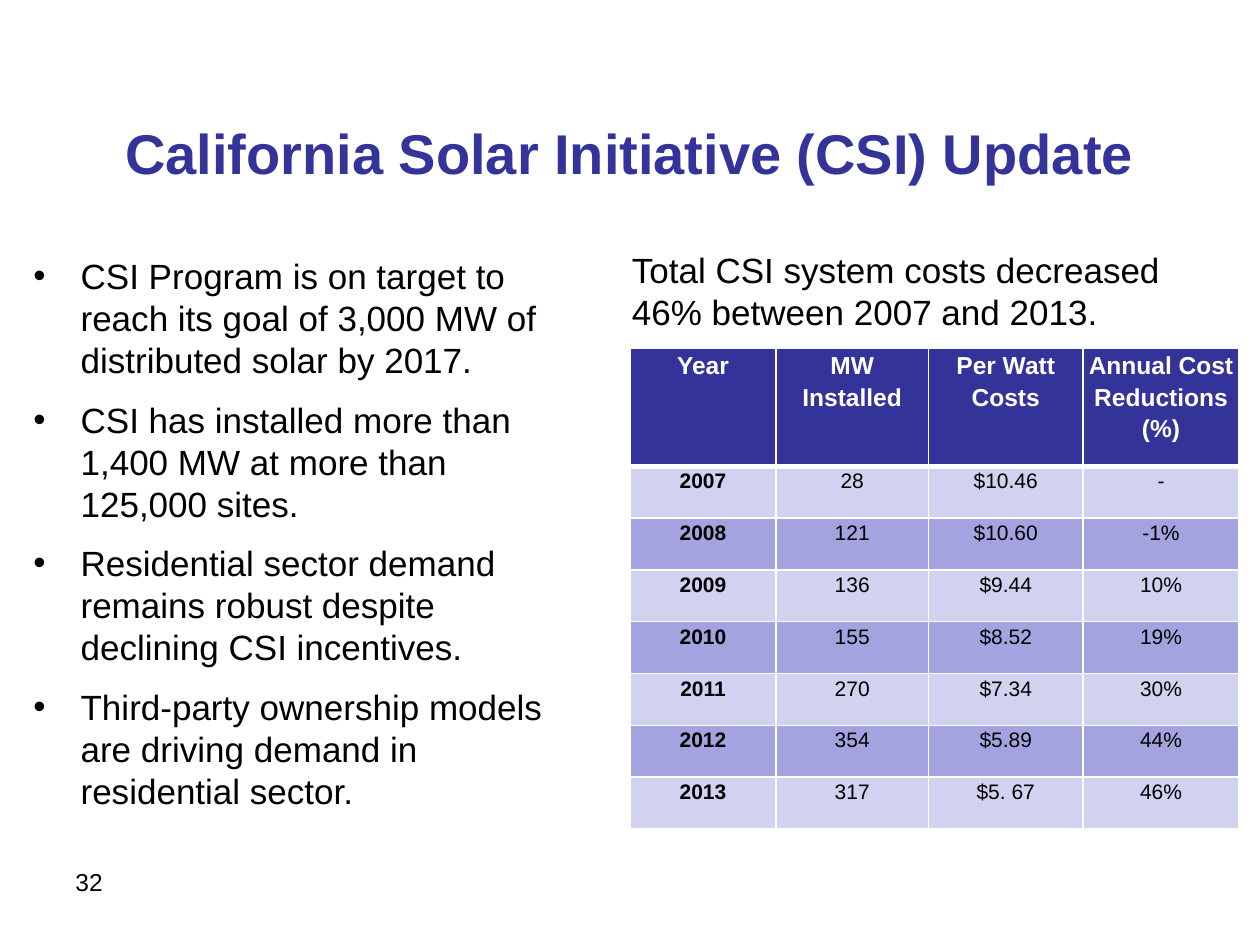
from typing import NamedTuple

from lxml import etree
from pptx import Presentation
from pptx.dml.color import RGBColor
from pptx.enum.text import MSO_ANCHOR, MSO_AUTO_SIZE, PP_ALIGN
from pptx.oxml.ns import qn
from pptx.util import Pt

LEFT, CENTER = PP_ALIGN.LEFT, PP_ALIGN.CENTER
TOP, MIDDLE = MSO_ANCHOR.TOP, MSO_ANCHOR.MIDDLE
FIT_SHAPE, NO_FIT = MSO_AUTO_SIZE.SHAPE_TO_FIT_TEXT, MSO_AUTO_SIZE.NONE

FONT = "Arial"
INDIGO, LAVENDER, PALE = "333399", "A3A3E0", "D1D1F0"
WHITE, BLACK = "FFFFFF", "000000"
BULLET_INDENT = 27


class Box(NamedTuple):
    left: float
    top: float
    width: float
    height: float


class YearResult(NamedTuple):
    year: str
    installed: str
    cost: str
    reduction: str


HEADINGS = YearResult("Year", "MW Installed", "Per Watt Costs", "Annual Cost Reductions (%)")
RESULTS = [
    YearResult("2007", "28", "$10.46", "-"),
    YearResult("2008", "121", "$10.60", "-1%"),
    YearResult("2009", "136", "$9.44", "10%"),
    YearResult("2010", "155", "$8.52", "19%"),
    YearResult("2011", "270", "$7.34", "30%"),
    YearResult("2012", "354", "$5.89", "44%"),
    YearResult("2013", "317", "$5. 67", "46%"),
]
HIGHLIGHTS = [
    "CSI Program is on target to reach its goal of 3,000 MW of distributed solar by 2017.",
    "CSI has installed more than 1,400 MW at more than 125,000 sites.",
    "Residential sector demand remains robust despite declining CSI incentives.",
    "Third-party ownership models are driving demand in residential sector.",
]
COLUMN_WIDTHS = [83.5, 87, 88.5, 89]
HEADING_HEIGHT, RESULT_HEIGHT = 67.5, 29.6
CELL_MARGIN = 2.5


def color(value: str) -> RGBColor:
    return RGBColor.from_string(value)


def add_bullet(paragraph) -> None:
    properties = paragraph._p.get_or_add_pPr()
    properties.set("marL", str(Pt(BULLET_INDENT)))
    properties.set("indent", str(-Pt(BULLET_INDENT)))
    etree.SubElement(properties, qn("a:buFont")).set("typeface", FONT)
    etree.SubElement(properties, qn("a:buChar")).set("char", "•")


def write(frame, *lines: str, size: float, ink: str = BLACK, bold: bool = False,
          align=LEFT, bullets: bool = False, spacing: float = 1,
          before: float = 0, after: float = 0) -> None:
    for index, line in enumerate(lines):
        paragraph = frame.add_paragraph() if index else frame.paragraphs[0]
        if bullets:
            add_bullet(paragraph)
        paragraph.alignment = align
        paragraph.line_spacing = spacing
        paragraph.space_before = Pt(before if index else 0)
        paragraph.space_after = Pt(after)
        run = paragraph.add_run()
        run.text = line
        run.font.name = FONT
        run.font.size = Pt(size)
        run.font.bold = bold
        run.font.color.rgb = color(ink)


def add_text(slide, box: Box, *lines: str, fit=NO_FIT, **text_format) -> None:
    frame = slide.shapes.add_textbox(*map(Pt, box)).text_frame
    frame.word_wrap = True
    frame.auto_size = fit
    write(frame, *lines, **text_format)


def set_borders(cell, top: float, bottom: float) -> None:
    properties = cell._tc.get_or_add_tcPr()
    for side, width in (("L", 1), ("R", 1), ("T", top), ("B", bottom)):
        line = etree.SubElement(properties, qn(f"a:ln{side}"), w=str(Pt(width)))
        solid = etree.SubElement(line, qn("a:solidFill"))
        etree.SubElement(solid, qn("a:srgbClr"), val=WHITE)


def fill_cell(cell, text: str, background: str, top: float = 1, bottom: float = 1,
              **text_format) -> None:
    set_borders(cell, top, bottom)
    cell.fill.solid()
    cell.fill.fore_color.rgb = color(background)
    cell.margin_left = cell.margin_right = Pt(CELL_MARGIN)
    cell.margin_top = cell.margin_bottom = Pt(0)
    cell.vertical_anchor = TOP
    write(cell.text_frame, text, align=CENTER, spacing=1.15, after=10, **text_format)


def add_results(slide, left: float, top: float) -> None:
    height = HEADING_HEIGHT + RESULT_HEIGHT * len(RESULTS)
    box = Box(left, top, sum(COLUMN_WIDTHS), height)
    table = slide.shapes.add_table(
        len(RESULTS) + 1, len(COLUMN_WIDTHS), *map(Pt, box)).table
    for column, width in zip(table.columns, COLUMN_WIDTHS):
        column.width = Pt(width)
    for row in table.rows:
        row.height = Pt(RESULT_HEIGHT)
    table.rows[0].height = Pt(HEADING_HEIGHT)

    for column, heading in enumerate(HEADINGS):
        fill_cell(table.cell(0, column), heading, INDIGO, bottom=3,
                  size=14, ink=WHITE, bold=True)
    for row, result in enumerate(RESULTS, start=1):
        for column, value in enumerate(result):
            fill_cell(table.cell(row, column), value, PALE if row % 2 else LAVENDER,
                      top=3 if row == 1 else 1, size=12, bold=column == 0)


def add_title(slide, box: Box, text: str) -> None:
    title = slide.shapes.title
    title.left, title.top, title.width, title.height = map(Pt, box)
    title.text_frame.vertical_anchor = MIDDLE
    write(title.text_frame, text, size=32, ink=INDIGO, bold=True, align=CENTER)


def main() -> None:
    presentation = Presentation()
    presentation.slide_width, presentation.slide_height = Pt(720), Pt(540)
    slide = presentation.slides.add_slide(presentation.slide_layouts[5])

    add_title(slide, Box(36, 48, 648, 78), "California Solar Initiative (CSI) Update")
    add_text(slide, Box(12, 142, 318, 320), *HIGHLIGHTS,
             size=20, bullets=True, before=4, after=6)
    add_results(slide, 360, 199)
    add_text(slide, Box(36, 492, 132, 37.5), "32", size=14)
    add_text(slide, Box(354, 138.6, 348, 75),
             "Total CSI system costs decreased 46% between 2007 and 2013.",
             size=20, fit=FIT_SHAPE)
    presentation.save("out.pptx")


if __name__ == "__main__":
    main()
